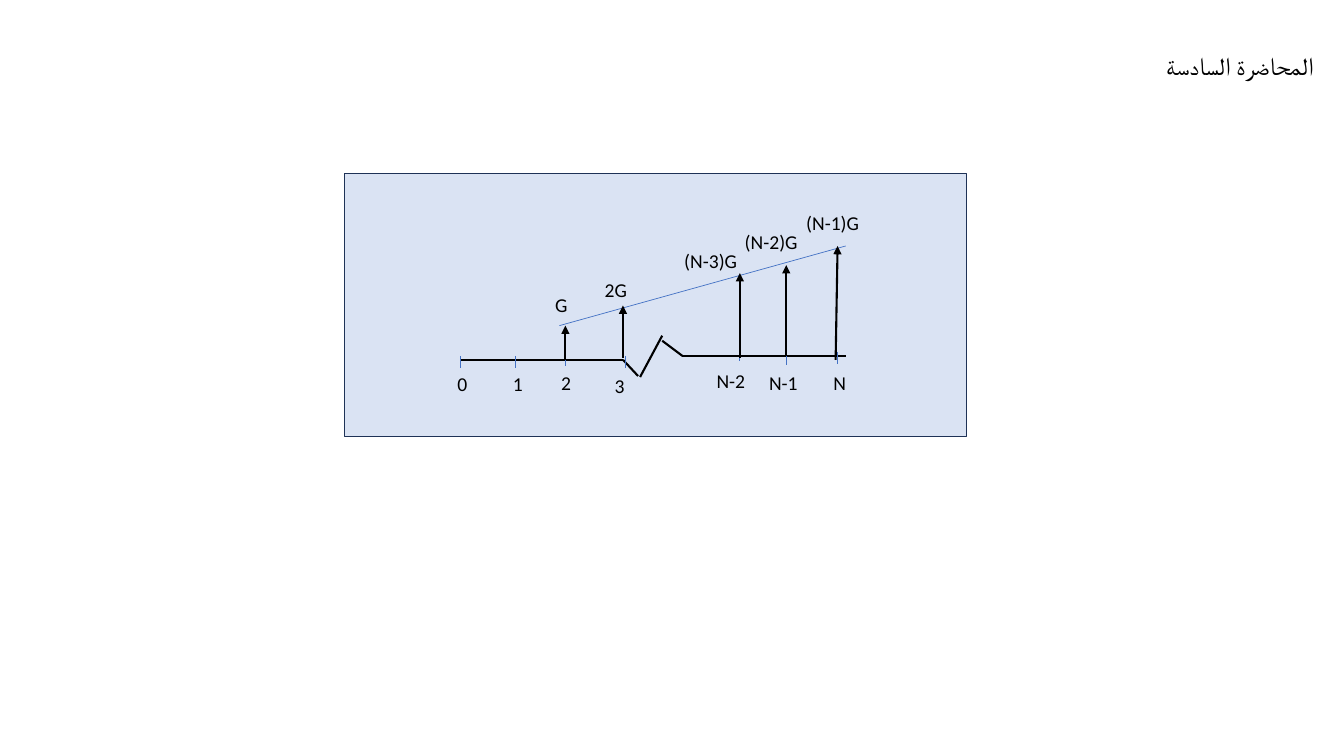
"""Build a slide with an arithmetic gradient cash-flow diagram."""
from dataclasses import dataclass

from lxml.etree import SubElement
from pptx import Presentation
from pptx.dml.color import RGBColor
from pptx.enum.shapes import MSO_CONNECTOR as Connector, MSO_SHAPE as Preset
from pptx.enum.text import MSO_ANCHOR as Anchor, MSO_AUTO_SIZE as AutoSize, PP_ALIGN as Align
from pptx.oxml.ns import qn
from pptx.shapes.shapetree import GroupShapes
from pptx.text.text import TextFrame
from pptx.util import Pt

BLACK = RGBColor(0x00, 0x00, 0x00)
BLUE = RGBColor(0x44, 0x72, 0xC4)
NAVY = RGBColor(0x1E, 0x32, 0x56)
PALE_BLUE = RGBColor(0xDA, 0xE3, 0xF3)
FONT = "Calibri"
LABEL_HEIGHT = 24.5
TICK_HEIGHT = 8.6
Point = tuple[float, float]


@dataclass(frozen=True)
class Label:
    text: str
    left: float
    top: float
    width: float


@dataclass(frozen=True)
class Period:
    tick_x: float
    tick_top: float
    label: Label


@dataclass(frozen=True)
class CashFlow:
    start: Point
    end: Point
    label: Label


AXIS_SEGMENTS: list[tuple[Point, Point]] = [
    ((329, 257), (445, 257)),
    ((445, 257), (455.8, 268.6)),
    ((457.2, 269.3), (473, 239.8)),
    ((473, 243.4), (487.4, 254.2)),
    ((487.4, 254.2), (604.1, 254.2)),
]
PERIODS = [
    Period(329, 254.2, Label("0", 319.7, 262.1, 21.6)),
    Period(367.9, 254.2, Label("1", 359.3, 262.1, 21.6)),
    Period(403.9, 252.7, Label("2", 393.8, 261.4, 21.6)),
    Period(446.4, 254.2, Label("3", 432, 263.5, 19.4)),
    Period(527.8, 249.1, Label("N-2", 504.7, 259.9, 42.5)),
    Period(561.6, 252, Label("N-1", 542.2, 261.4, 42.5)),
    Period(598.3, 251.3, Label("N", 588.2, 261.4, 42.5)),
]
CASH_FLOWS = [
    CashFlow((403.9, 257), (403.9, 232.6), Label("G", 389.5, 205.9, 28.8)),
    CashFlow((445, 255.6), (445, 218.2), Label("2G", 424.8, 195.1, 43.9)),
    CashFlow((528.5, 255.6), (528.5, 195.1), Label("(N-3)G", 481.7, 174.2, 55.4)),
    CashFlow((561.6, 254.2), (561.6, 189.4), Label("(N-2)G", 524.9, 160.6, 55.4)),
    CashFlow((596.9, 257), (598.3, 175.7), Label("(N-1)G", 568.8, 146.9, 55.4)),
]


def write_text(frame: TextFrame, text: str, size: float) -> None:
    frame.text = text
    frame.word_wrap = True
    frame.auto_size = AutoSize.SHAPE_TO_FIT_TEXT
    frame.vertical_anchor = Anchor.TOP
    paragraph = frame.paragraphs[0]
    paragraph.alignment = Align.LEFT
    paragraph.font.name = FONT
    paragraph.font.size = Pt(size)
    paragraph.font.color.rgb = BLACK


def draw_label(shapes: GroupShapes, label: Label) -> None:
    box = shapes.add_textbox(Pt(label.left), Pt(label.top), Pt(label.width), Pt(LABEL_HEIGHT))
    write_text(box.text_frame, label.text, 14)


def draw_line(shapes: GroupShapes, start: Point, end: Point, color: RGBColor,
              width: float, arrow: bool = False) -> None:
    connector = shapes.add_connector(Connector.STRAIGHT, *map(Pt, start + end))
    connector.line.color.rgb = color
    connector.line.width = Pt(width)
    properties = connector.element.spPr
    if arrow:
        SubElement(properties.find(qn("a:ln")), qn("a:tailEnd"), type="triangle")
    SubElement(properties, qn("a:effectLst"))


def draw_panel(shapes: GroupShapes) -> None:
    panel = shapes.add_shape(Preset.RECTANGLE, Pt(246.2), Pt(123.8), Pt(444.2), Pt(187.9))
    panel.shadow.inherit = False
    panel.fill.solid()
    panel.fill.fore_color.rgb = PALE_BLUE
    panel.line.color.rgb = NAVY
    panel.line.width = Pt(1)


def main() -> None:
    presentation = Presentation()
    presentation.slide_width, presentation.slide_height = Pt(960), Pt(540)
    slide = presentation.slides.add_slide(presentation.slide_layouts[5])

    title = slide.shapes.title
    title.left, title.top, title.width, title.height = Pt(825.8), Pt(32.4), Pt(121.7), Pt(28.8)
    write_text(title.text_frame, "المحاضرة السادسة", 18)

    diagram = slide.shapes.add_group_shape().shapes
    draw_panel(diagram)
    for start, end in AXIS_SEGMENTS:
        draw_line(diagram, start, end, BLACK, 1.5)
    for period in PERIODS:
        tick_bottom = period.tick_top + TICK_HEIGHT
        draw_line(diagram, (period.tick_x, period.tick_top), (period.tick_x, tick_bottom), BLUE, 0.5)
        draw_label(diagram, period.label)
    draw_line(diagram, (399.6, 232.6), (604.1, 175.7), BLUE, 0.5)
    for flow in CASH_FLOWS:
        draw_line(diagram, flow.start, flow.end, BLACK, 1.5, arrow=True)
        draw_label(diagram, flow.label)

    presentation.save("out.pptx")


if __name__ == "__main__":
    main()
